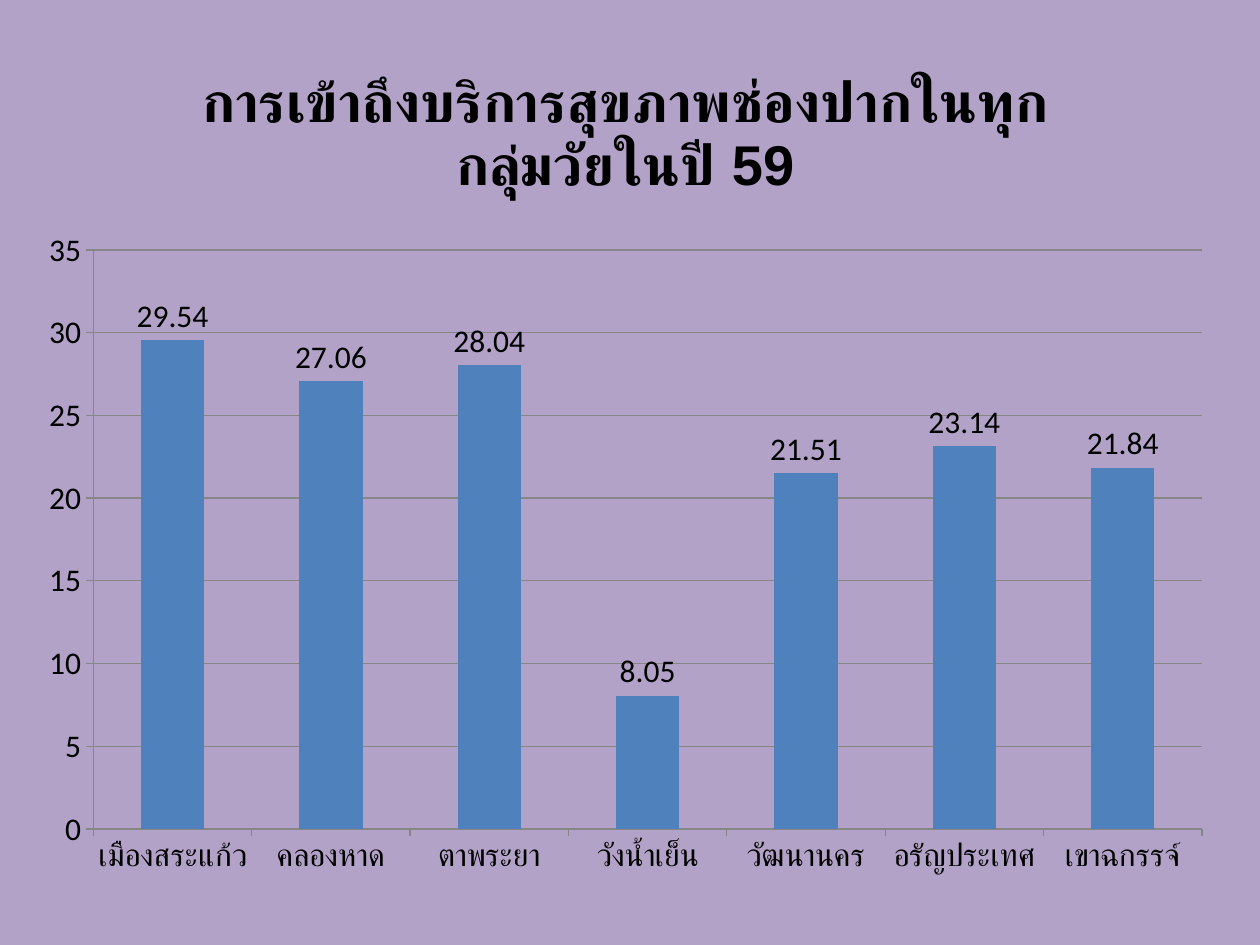
from pptx import Presentation
from pptx.chart.data import CategoryChartData
from pptx.dml.color import RGBColor
from pptx.enum.chart import XL_CHART_TYPE, XL_LABEL_POSITION, XL_TICK_MARK
from pptx.util import Pt

COLUMNS = XL_CHART_TYPE.COLUMN_CLUSTERED
LABEL_ABOVE = XL_LABEL_POSITION.OUTSIDE_END
TICK_OUT, TICK_NONE = XL_TICK_MARK.OUTSIDE, XL_TICK_MARK.NONE

HEADING = "การเข้าถึงบริการสุขภาพช่องปากในทุกกลุ่มวัยในปี 59"
ACCESS_BY_DISTRICT = {
    "เมืองสระแก้ว": 29.54,
    "คลองหาด": 27.06,
    "ตาพระยา": 28.04,
    "วังน้ำเย็น": 8.05,
    "วัฒนานคร": 21.51,
    "อรัญประเทศ": 23.14,
    "เขาฉกรรจ์": 21.84,
}
COLORS = {"background": "B3A2C7", "bar": "4F81BD", "text": "000000", "line": "868686"}
CHART_FONT = {"name": "Calibri", "size": Pt(18), "bold": False}
HEADING_FONT = {"name": "Arial", "size": Pt(32), "bold": True}
SCALE = {"minimum_scale": 0, "maximum_scale": 35, "major_unit": 5}
LABELS = {"show_value": True, "position": LABEL_ABOVE,
          "number_format": "0.00", "number_format_is_linked": False}
TICKS = {"major_tick_mark": TICK_OUT, "minor_tick_mark": TICK_NONE}

EMU_PER_PX = 914400 // 126
SLIDE_SIZE = (1260, 945)
CHART_BOX = (25, 37, 1201, 853)


def px(*lengths):
    return [length * EMU_PER_PX for length in lengths]


def color(name):
    return RGBColor.from_string(COLORS[name])


def apply(target, values):
    for name, value in values.items():
        setattr(target, name, value)


def style_font(font, values):
    apply(font, values)
    font.color.rgb = color("text")


def style_line(line):
    line.color.rgb = color("line")
    line.width = Pt(0.75)


def add_access_chart(slide):
    access = CategoryChartData(number_format="0.00")
    access.categories = list(ACCESS_BY_DISTRICT)
    access.add_series(HEADING, list(ACCESS_BY_DISTRICT.values()))
    chart = slide.shapes.add_chart(COLUMNS, *px(*CHART_BOX), access).chart
    style_font(chart.font, CHART_FONT)
    chart.has_legend = False

    chart.has_title = True
    heading = chart.chart_title.text_frame
    heading.text = HEADING
    style_font(heading.paragraphs[0].runs[0].font, HEADING_FONT)
    chart.chart_title.include_in_layout = False

    districts, percent = chart.category_axis, chart.value_axis
    for axis in (districts, percent):
        apply(axis, TICKS)
        style_line(axis.format.line)
    apply(percent, SCALE)
    percent.has_major_gridlines = True
    style_line(percent.major_gridlines.format.line)
    percent.tick_labels.number_format = "0"
    percent.tick_labels.number_format_is_linked = False

    bars = chart.plots[0]
    apply(bars, {"gap_width": 150, "vary_by_categories": False, "has_data_labels": True})
    apply(bars.data_labels, LABELS)
    style_font(bars.data_labels.font, CHART_FONT)
    fill = bars.series[0].format.fill
    fill.solid()
    fill.fore_color.rgb = color("bar")


def main():
    deck = Presentation()
    deck.slide_width, deck.slide_height = px(*SLIDE_SIZE)
    slide = deck.slides.add_slide(deck.slide_layouts[6])
    slide.background.fill.solid()
    slide.background.fill.fore_color.rgb = color("background")
    add_access_chart(slide)
    deck.save("out.pptx")


if __name__ == "__main__":
    main()
